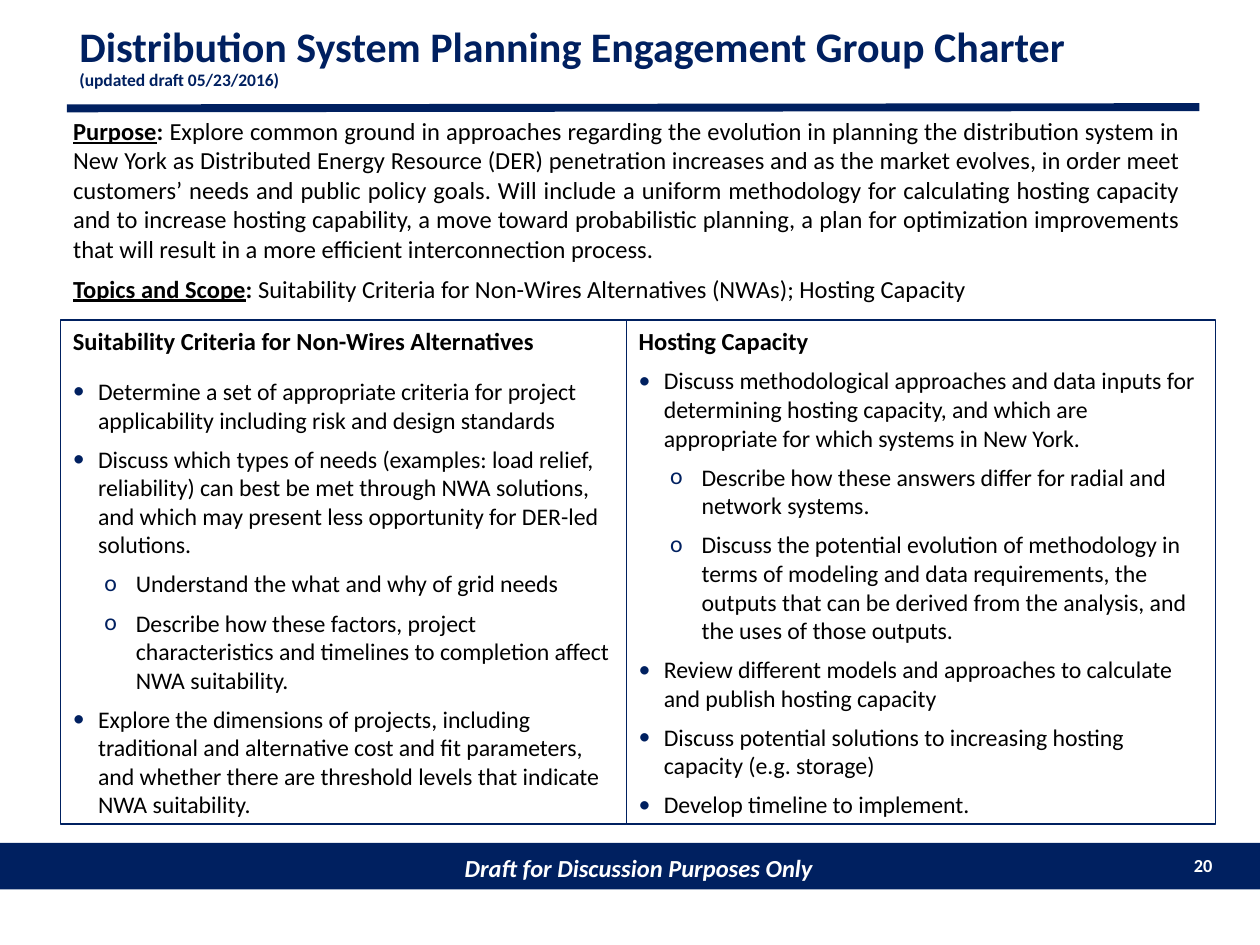
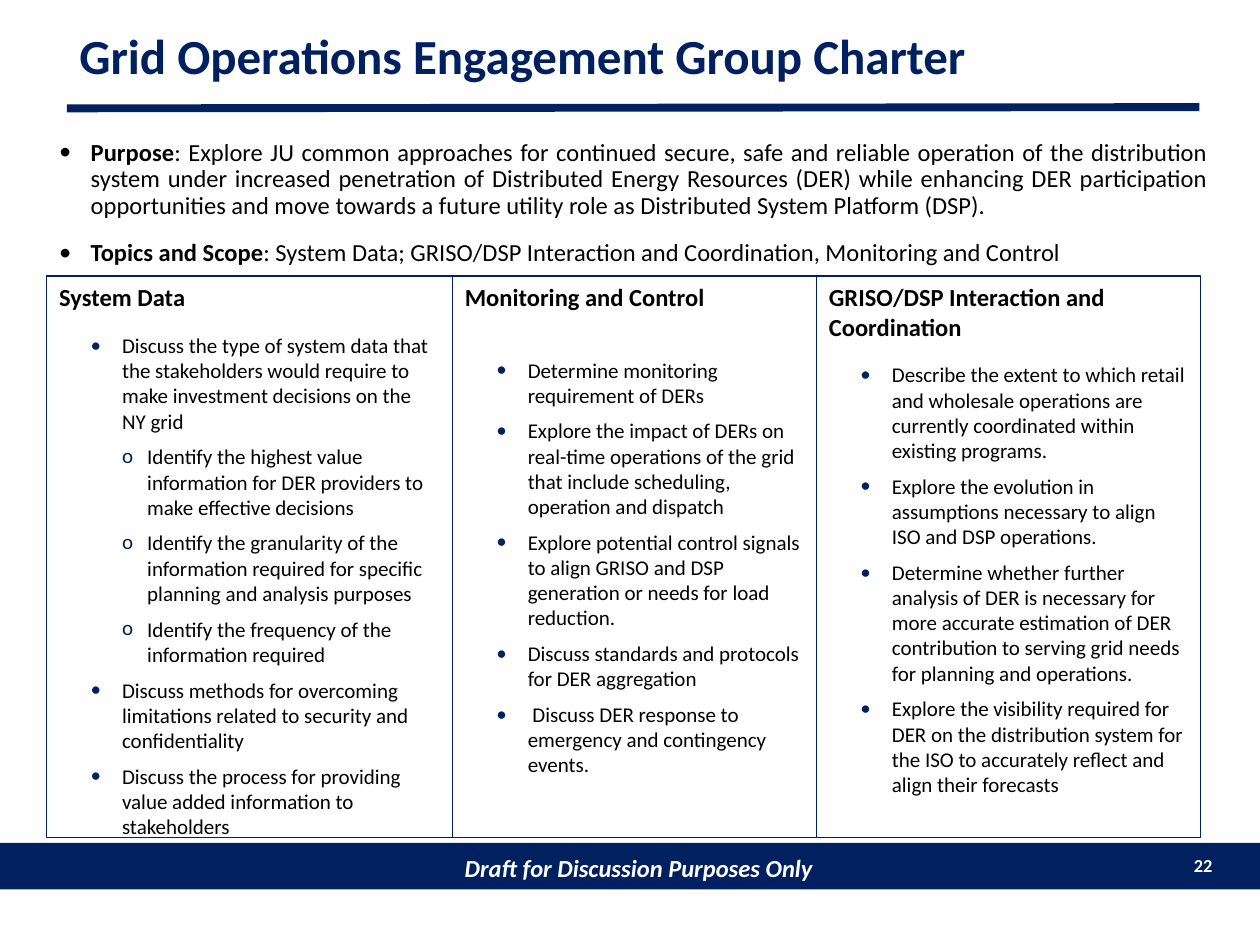
from lxml.etree import SubElement
from pptx import Presentation
from pptx.dml.color import RGBColor
from pptx.enum.shapes import MSO_CONNECTOR, MSO_SHAPE
from pptx.enum.text import MSO_ANCHOR, MSO_AUTO_SIZE, PP_ALIGN
from pptx.oxml.ns import qn
from pptx.util import Inches, Pt

COLORS = {"navy": "002060", "black": "000000", "white": "FFFFFF"}
FONT = "Calibri"

slides = [
    {
        "number": "20",
        "title": [("Distribution System Planning Engagement Group Charter", 24),
                  ("(updated draft 05/23/2016)", 10)],
        "body_box": (0.48, 0.87, 8.99, 1.6),
        "body_bullets": False,
        "body_spacing": 1.0,
        "body_gap": 6,
        "body": [
            [("Purpose", True, True), (": ", True, False),
             ("Explore common ground in approaches regarding the evolution in planning the distribution "
              "system in New York as Distributed Energy Resource (DER) penetration increases and as the "
              "market evolves, in order meet customers’ needs and public policy goals. Will include a "
              "uniform methodology for calculating hosting capacity and to increase hosting capability, "
              "a move toward probabilistic planning, a plan for optimization improvements that will "
              "result in a more efficient interconnection process.", False, False)],
            [("Topics and Scope", True, True), (": ", True, False),
             ("Suitability Criteria for Non-Wires Alternatives (NWAs); Hosting Capacity", False, False)],
        ],
        "panel_left": 0.48, "panel_top": 2.54, "panel_height": 4.0,
        "panel_size": 13.6,
        "indents": {0: (0.2, 0.2, "•"), 1: (0.5, 0.25, "o")},
        "panels": [
            (4.49, "Suitability Criteria for Non-Wires Alternatives", 6, [
                (0, "Determine a set of appropriate criteria for project applicability including risk "
                    "and design standards"),
                (0, "Discuss which types of needs (examples: load relief, reliability) can best be met "
                    "through NWA solutions, and which may present less opportunity for DER-led solutions."),
                (1, "Understand the what and why of grid needs"),
                (1, "Describe how these factors, project characteristics and timelines to completion "
                    "affect NWA suitability."),
                (0, "Explore the dimensions of projects, including traditional and alternative cost and "
                    "fit parameters, and whether there are threshold levels that indicate NWA suitability."),
            ]),
            (4.68, "Hosting Capacity", 0, [
                (0, "Discuss methodological approaches and data inputs for determining hosting capacity, "
                    "and which are appropriate for which systems in New York."),
                (1, "Describe how these answers differ for radial and network systems."),
                (1, "Discuss the potential evolution of methodology in terms of modeling and data "
                    "requirements, the outputs that can be derived from the analysis, and the uses of "
                    "those outputs."),
                (0, "Review different models and approaches to calculate and publish hosting capacity"),
                (0, "Discuss potential solutions to increasing hosting capacity (e.g. storage)"),
                (0, "Develop timeline to implement."),
            ]),
        ],
    },
    {
        "number": "22",
        "title": [("Grid Operations Engagement Group Charter", 28)],
        "body_box": (0.37, 1.06, 9.32, 1.1),
        "body_bullets": True,
        "body_spacing": 0.9,
        "body_gap": 12,
        "body": [
            [("Purpose", True, False),
             (": Explore JU common approaches for continued secure, safe and reliable operation of the "
              "distribution system under increased penetration of Distributed Energy Resources (DER) "
              "while enhancing DER participation opportunities and move towards a future utility role "
              "as Distributed System Platform (DSP).", False, False)],
            [("Topics and Scope", True, False),
             (": System Data; GRISO/DSP Interaction and Coordination, Monitoring and Control",
              False, False)],
        ],
        "panel_left": 0.37, "panel_top": 2.19, "panel_height": 4.46,
        "panel_size": 12,
        "indents": {1: (0.5, 0.25, "•"), 2: (0.7, 0.2, "o")},
        "panels": [
            (3.22, "System Data", 6, [
                (1, "Discuss the type of system data that the stakeholders would require to make "
                    "investment decisions on the NY grid"),
                (2, "Identify the highest value information for DER providers to make effective decisions"),
                (2, "Identify the granularity of the information required for specific planning and "
                    "analysis purposes"),
                (2, "Identify the frequency of the information required"),
                (1, "Discuss methods for overcoming limitations related to security and confidentiality"),
                (1, "Discuss the process for providing value added information to stakeholders"),
            ]),
            (2.89, "Monitoring and Control", 20, [
                (1, "Determine monitoring requirement of DERs"),
                (1, "Explore the impact of DERs on real-time operations of the grid that include "
                    "scheduling, operation and dispatch"),
                (1, "Explore potential control signals to align GRISO and DSP generation or needs for "
                    "load reduction."),
                (1, "Discuss standards and protocols for DER aggregation"),
                (1, " Discuss DER response to emergency and contingency events."),
            ]),
            (3.05, "GRISO/DSP Interaction and Coordination", 6, [
                (1, "Describe the extent to which retail and wholesale operations are currently "
                    "coordinated within existing programs."),
                (1, "Explore the evolution in assumptions necessary to align ISO and DSP operations."),
                (1, "Determine whether further analysis of DER is necessary for more accurate estimation "
                    "of DER contribution to serving grid needs for planning and operations."),
                (1, "Explore the visibility required for DER on the distribution system for the ISO to "
                    "accurately reflect and align their forecasts"),
            ]),
        ],
    },
]


def add_run(p, text, size, color="black", bold=False, italic=False, underline=False):
    r = p.add_run()
    r.text = text
    f = r.font
    f.name, f.size = FONT, Pt(size)
    f.bold, f.italic, f.underline = bold, italic, underline
    f.color.rgb = RGBColor.from_string(COLORS[color])


def set_bullet(p, left, hanging, char, color):
    pPr = p._p.get_or_add_pPr()
    pPr.set("marL", str(Inches(left)))
    pPr.set("indent", str(-Inches(hanging)))
    if char:
        clr = SubElement(pPr, qn("a:buClr"))
        SubElement(clr, qn("a:srgbClr"), val=COLORS[color])
        SubElement(pPr, qn("a:buFont"), typeface=FONT)
        SubElement(pPr, qn("a:buChar"), char=char)
    else:
        SubElement(pPr, qn("a:buNone"))


prs = Presentation()
prs.slide_width, prs.slide_height = Inches(10), Inches(7.5)

for page in slides:
    s = prs.slides.add_slide(prs.slide_layouts[1])

    band = s.shapes.add_shape(MSO_SHAPE.RECTANGLE, 0, Inches(6.69), prs.slide_width, Inches(0.37))
    band.shadow.inherit = False
    band.fill.solid()
    band.fill.fore_color.rgb = RGBColor.from_string(COLORS["navy"])
    band.line.fill.background()
    tf = band.text_frame
    tf.margin_left, tf.margin_top = Inches(0.24), Inches(0.07)
    tf.vertical_anchor = MSO_ANCHOR.MIDDLE
    p = tf.paragraphs[0]
    p.alignment = PP_ALIGN.CENTER
    add_run(p, "Draft for Discussion Purposes Only", 14, "white", bold=True, italic=True)

    number = s.shapes.add_textbox(Inches(9.31), Inches(6.73), Inches(0.41), Inches(0.29))
    number.text_frame.word_wrap = True
    p = number.text_frame.paragraphs[0]
    p.alignment = PP_ALIGN.RIGHT
    add_run(p, page["number"], 10.5, "white", bold=True)

    rule = s.shapes.add_connector(MSO_CONNECTOR.STRAIGHT, Inches(0.53), Inches(0.86),
                                  Inches(9.52), Inches(0.85))
    rule.line.color.rgb = RGBColor.from_string(COLORS["navy"])
    rule.line.width = Pt(4.5)
    SubElement(rule._element.spPr, qn("a:effectLst"))

    title = s.shapes.title
    title.left, title.top, title.width, title.height = map(Inches, (0.53, 0.13, 8.99, 0.67))
    tf = title.text_frame
    tf.auto_size, tf.vertical_anchor = MSO_AUTO_SIZE.NONE, MSO_ANCHOR.MIDDLE
    p = tf.paragraphs[0]
    p.alignment, p.line_spacing = PP_ALIGN.LEFT, 0.9
    for i, (text, size) in enumerate(page["title"]):
        if i:
            p.add_line_break()
        add_run(p, text, size, "navy", bold=True)

    body = s.placeholders[1]
    body.left, body.top, body.width, body.height = map(Inches, page["body_box"])
    tf = body.text_frame
    tf.auto_size, tf.vertical_anchor = MSO_AUTO_SIZE.NONE, MSO_ANCHOR.TOP
    for i, runs in enumerate(page["body"]):
        p = tf.add_paragraph() if i else tf.paragraphs[0]
        if page["body_bullets"]:
            set_bullet(p, 0.25, 0.25, "•", "black")
        else:
            set_bullet(p, 0, 0, None, None)
        p.alignment, p.line_spacing = PP_ALIGN.JUSTIFY, page["body_spacing"]
        p.space_before = Pt(page["body_gap"] if i else 0)
        for text, bold, underline in runs:
            add_run(p, text, 14, bold=bold, underline=underline)

    left = page["panel_left"]
    for width, heading, heading_gap, bullets in page["panels"]:
        sp = s.shapes.add_shape(MSO_SHAPE.RECTANGLE, Inches(left), Inches(page["panel_top"]),
                                Inches(width), Inches(page["panel_height"]))
        left += width
        sp.shadow.inherit = False
        sp.fill.background()
        sp.line.color.rgb = RGBColor.from_string(COLORS["navy"])
        sp.line.width = Pt(0.75)
        tf = sp.text_frame
        tf.word_wrap, tf.vertical_anchor = True, MSO_ANCHOR.TOP
        p = tf.paragraphs[0]
        p.alignment, p.space_after = PP_ALIGN.LEFT, Pt(heading_gap)
        add_run(p, heading, 14, bold=True)
        for level, text in bullets:
            p = tf.add_paragraph()
            p.level = level
            set_bullet(p, *page["indents"][level], "navy")
            p.alignment, p.space_before = PP_ALIGN.LEFT, Pt(6)
            add_run(p, text, page["panel_size"])

prs.save("out.pptx")
